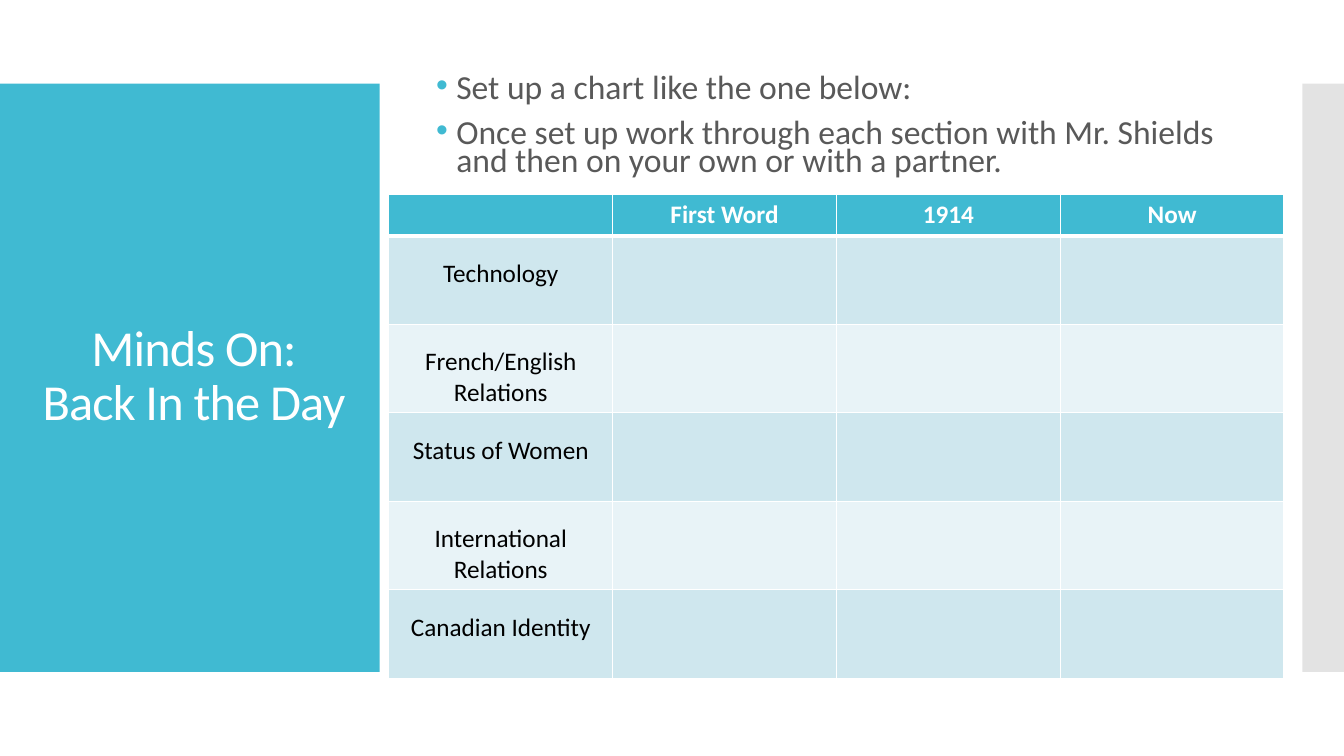
"""Build the Minds On slide with its comparison chart."""
import pptx
import pptx.dml.color
import pptx.enum.shapes
import pptx.enum.text
import pptx.oxml.ns
import pptx.util
from lxml import etree

Cm = pptx.util.Cm
Pt = pptx.util.Pt
RGBColor = pptx.dml.color.RGBColor
ALIGN = pptx.enum.text.PP_ALIGN
ANCHOR = pptx.enum.text.MSO_ANCHOR
qn = pptx.oxml.ns.qn

TITLE = "Minds On:\nBack In the Day"
INSTRUCTIONS = [
    "Set up a chart like the one below:",
    "Once set up work through each section with Mr. Shields and then on your own or with a partner.",
]
HEADINGS = ["", "First Word", "1914", "Now"]
TOPICS = [
    "Technology",
    "French/English Relations",
    "Status of Women",
    "International Relations",
    "Canadian Identity",
]

FONT = "Calibri"
TEAL = RGBColor(0x40, 0xBA, 0xD2)
SILVER = RGBColor(0xC8, 0xC8, 0xC8)
WHITE = RGBColor(0xFF, 0xFF, 0xFF)
BLACK = RGBColor(0x00, 0x00, 0x00)
GREY = RGBColor(0x59, 0x59, 0x59)
BANDS = [RGBColor(0xCF, 0xE7, 0xEE), RGBColor(0xE8, 0xF3, 0xF7)]

PANEL_TOP, PANEL_HEIGHT = 2.11, 14.82
COLUMN_WIDTH, HEADER_HEIGHT, TOPIC_HEIGHT = 5.64, 1.03, 2.23


def add_panel(page, left, width, color):
    panel = page.shapes.add_shape(
        pptx.enum.shapes.MSO_SHAPE.RECTANGLE,
        Cm(left), Cm(PANEL_TOP), Cm(width), Cm(PANEL_HEIGHT))
    panel.shadow.inherit = False
    panel.fill.solid()
    panel.fill.fore_color.rgb = color
    panel.line.fill.background()
    return panel


def add_box(page, left, top, width, height, anchor):
    box = page.shapes.add_textbox(Cm(left), Cm(top), Cm(width), Cm(height))
    frame = box.text_frame
    frame.word_wrap = True
    frame.vertical_anchor = anchor
    frame.margin_top = frame.margin_bottom = 0
    return frame


def write(para, text, size=18, color=BLACK, bold=False, align=ALIGN.CENTER,
          line_spacing=1.0, tracking=0):
    para.text = text
    para.alignment = align
    para.line_spacing = line_spacing
    for span in para.runs:
        span.font.name = FONT
        span.font.size = Pt(size)
        span.font.bold = bold
        span.font.color.rgb = color
        if tracking:
            span.font._element.set("spc", str(tracking))


def add_bullet(para, color):
    properties = para._p.get_or_add_pPr()
    properties.set("marL", str(Cm(0.51)))
    properties.set("indent", str(-Cm(0.51)))
    bullet_color = etree.SubElement(properties, qn("a:buClr"))
    etree.SubElement(bullet_color, qn("a:srgbClr"), val=str(color))
    etree.SubElement(properties, qn("a:buFont"), typeface="Arial")
    etree.SubElement(properties, qn("a:buChar"), char="•")


def style_cell(cell, fill, top_width, bottom_width):
    properties = cell._tc.get_or_add_tcPr()
    widths = {"L": 1, "R": 1, "T": top_width, "B": bottom_width}
    for side, width in widths.items():
        border = etree.SubElement(properties, qn("a:ln" + side), w=str(Pt(width)))
        solid = etree.SubElement(border, qn("a:solidFill"))
        etree.SubElement(solid, qn("a:srgbClr"), val=str(WHITE))
    cell.fill.solid()
    cell.fill.fore_color.rgb = fill


def add_topic_table(page):
    height = HEADER_HEIGHT + TOPIC_HEIGHT * len(TOPICS)
    table = page.shapes.add_table(
        len(TOPICS) + 1, len(HEADINGS), Cm(9.8), Cm(4.91),
        Cm(COLUMN_WIDTH * len(HEADINGS)), Cm(height)).table
    for column in table.columns:
        column.width = Cm(COLUMN_WIDTH)
    for index, row in enumerate(table.rows):
        row.height = Cm(TOPIC_HEIGHT if index else HEADER_HEIGHT)
    for index, heading in enumerate(HEADINGS):
        cell = table.cell(0, index)
        style_cell(cell, TEAL, 1, 3)
        if heading:
            write(cell.text_frame.paragraphs[0], heading, color=WHITE, bold=True)
    for number, topic in enumerate(TOPICS, start=1):
        for column in range(len(HEADINGS)):
            style_cell(table.cell(number, column), BANDS[(number - 1) % 2],
                       3 if number == 1 else 1, 1)
        label = table.cell(number, 0)
        label.margin_top = Cm(0.57)
        label.margin_bottom = Cm(0.1)
        write(label.text_frame.paragraphs[0], topic)


def main():
    deck = pptx.Presentation()
    deck.slide_width, deck.slide_height = Cm(33.87), Cm(19.05)
    page = deck.slides.add_slide(deck.slide_layouts[6])

    add_panel(page, 0, 9.57, TEAL)
    edge = add_panel(page, 32.82, 1.05, SILVER)
    edge_color = edge._element.spPr.find(qn("a:solidFill"))[0]
    etree.SubElement(edge_color, qn("a:alpha"), val="50000")

    title = add_box(page, 0.43, 3.12, 8.92, 12.78, ANCHOR.MIDDLE)
    write(title.paragraphs[0], TITLE, size=36, color=WHITE,
          line_spacing=0.9, tracking=-60)

    body = add_box(page, 10.74, 1.93, 20.32, 2.8, ANCHOR.TOP)
    for index, instruction in enumerate(INSTRUCTIONS):
        para = body.add_paragraph() if index else body.paragraphs[0]
        write(para, instruction, size=24, color=GREY, align=ALIGN.LEFT,
              line_spacing=0.7)
        para.space_before = Pt(12 if index else 0)
        add_bullet(para, TEAL)

    add_topic_table(page)
    deck.save("out.pptx")


if __name__ == "__main__":
    main()
